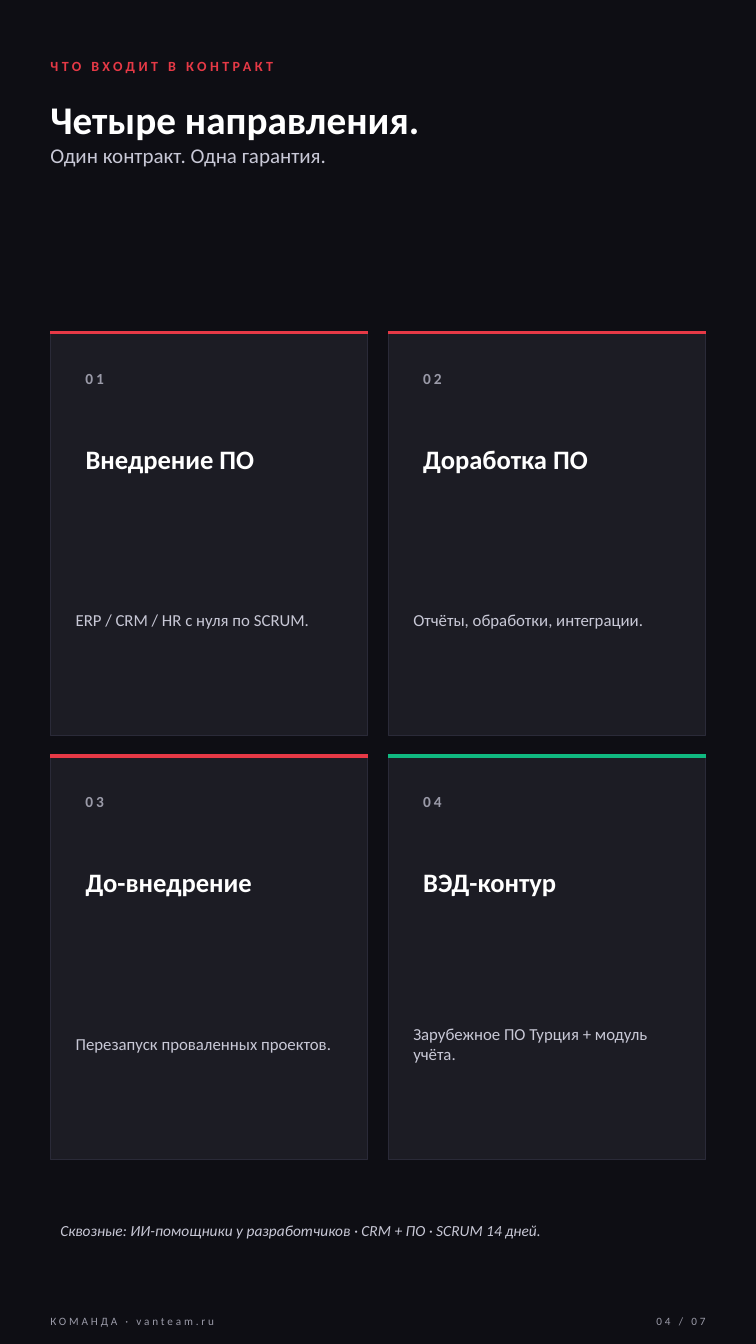
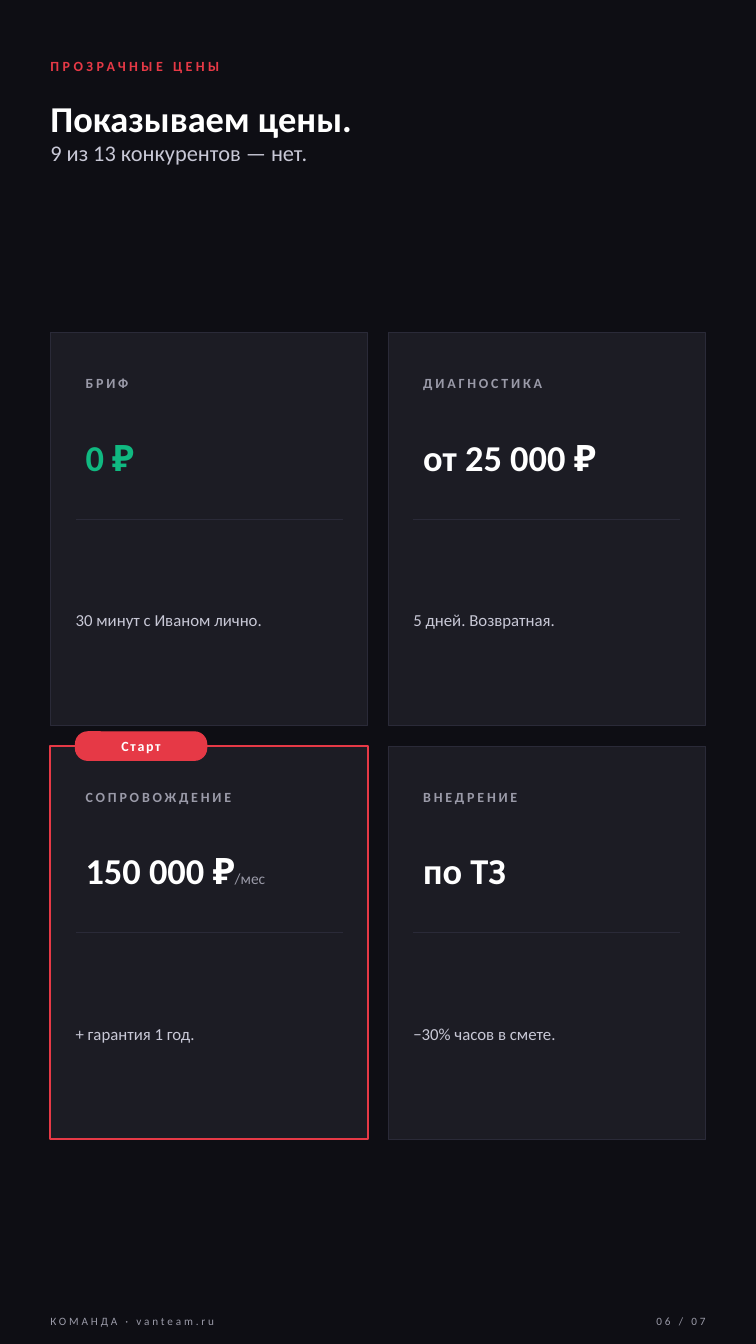
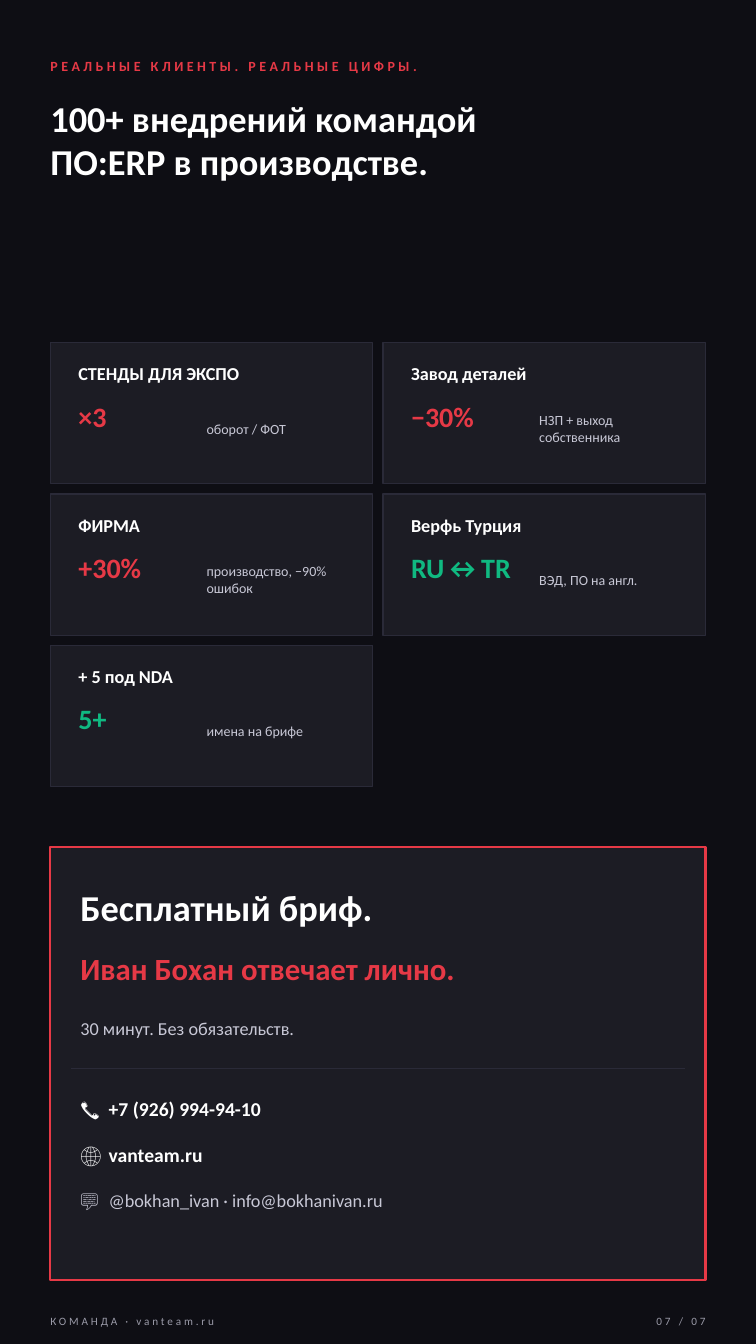
from pptx import Presentation
from pptx.dml.color import RGBColor
from pptx.enum.shapes import MSO_CONNECTOR as Connector, MSO_SHAPE as Shape
from pptx.enum.text import MSO_ANCHOR as Anchor, PP_ALIGN as Align
from pptx.oxml.ns import qn
from pptx.util import Emu, Pt
from lxml import etree

# Shared style: 100 px to the inch
EMU_PER_PX = 9144
SLIDE_WIDTH, SLIDE_HEIGHT = 750, 1333
MARGIN = 50
CONTENT_WIDTH = SLIDE_WIDTH - 2 * MARGIN
FONT = "Calibri"
BLANK_LAYOUT = 6

BACKGROUND = RGBColor(0x0E, 0x0E, 0x14)
CARD = RGBColor(0x1C, 0x1C, 0x24)
BORDER = RGBColor(0x2A, 0x2A, 0x38)
RED = RGBColor(0xE6, 0x39, 0x46)
GREEN = RGBColor(0x10, 0xB9, 0x81)
WHITE = RGBColor(0xFF, 0xFF, 0xFF)
LIGHT = RGBColor(0xC8, 0xC8, 0xD6)
MUTED = RGBColor(0x9A, 0x9A, 0xA8)


def px(length):
    return Emu(length * EMU_PER_PX)


def px_box(box):
    return [px(length) for length in box]


# Basic parts
def add_run(paragraph, text, size, color, bold=False, italic=False, spacing=0):
    for number, line in enumerate(text.split("\n")):
        if number:
            paragraph.add_line_break()
        if not line:
            continue
        run = paragraph.add_run()
        run.text = line
        font = run.font
        font.name, font.size, font.bold, font.italic = FONT, Pt(size), bold, italic
        font.color.rgb = color
        if spacing:
            run._r.get_or_add_rPr().set("spc", str(round(spacing * 100)))


def write(shape, text, align=Align.LEFT, anchor=Anchor.MIDDLE, padded=True,
          space_after=None, tab=None, tail=None, **style):
    """Fill a shape with one paragraph; tail is a second (text, style) run."""
    frame = shape.text_frame
    frame.word_wrap = True
    frame.vertical_anchor = anchor
    if not padded:
        frame.margin_left = frame.margin_right = 0
        frame.margin_top = frame.margin_bottom = 0
    paragraph = frame.paragraphs[0]
    paragraph.alignment = align
    if space_after:
        paragraph.space_after = Pt(space_after)
    if tab:
        tab_list = etree.SubElement(paragraph._p.get_or_add_pPr(), qn("a:tabLst"))
        etree.SubElement(tab_list, qn("a:tab"), pos=str(px(tab)), algn="l")
    add_run(paragraph, text, **style)
    if tail:
        tail_text, tail_style = tail
        add_run(paragraph, tail_text, **tail_style)


def add_text(slide, box, text, **style):
    write(slide.shapes.add_textbox(*px_box(box)), text, **style)


def add_panel(slide, box, fill=CARD, line=BORDER, line_width=0.75, kind=Shape.RECTANGLE):
    panel = slide.shapes.add_shape(kind, *px_box(box))
    panel.shadow.inherit = False
    panel.fill.solid()
    panel.fill.fore_color.rgb = fill
    panel.line.color.rgb = line
    panel.line.width = Pt(line_width)
    return panel


def add_rule(slide, left, top, width, color=BORDER, weight=0.75):
    rule = slide.shapes.add_connector(
        Connector.STRAIGHT, px(left), px(top), px(left + width), px(top))
    rule.line.color.rgb = color
    rule.line.width = Pt(weight)
    etree.SubElement(rule._element.spPr, qn("a:effectLst"))


def grid_boxes(count, top, height, gap_x, gap_y, columns=2):
    width = (CONTENT_WIDTH - gap_x * (columns - 1)) // columns
    for index in range(count):
        row, column = divmod(index, columns)
        yield (MARGIN + column * (width + gap_x), top + row * (height + gap_y),
               width, height)


# Header and footer of every slide
def start_slide(presentation, number, label, title, title_size, tail=None):
    slide = presentation.slides.add_slide(presentation.slide_layouts[BLANK_LAYOUT])
    add_text(slide, (MARGIN, 50, 630, 30), label, padded=False,
             size=10, color=RED, bold=True, spacing=2.5)
    add_text(slide, (MARGIN, 95, CONTENT_WIDTH, 160), title, padded=False,
             anchor=Anchor.TOP, space_after=4, tail=tail,
             size=title_size, color=WHITE, bold=True)
    footer = dict(padded=False, size=8, color=MUTED, spacing=2)
    add_text(slide, (MARGIN, 1298, 450, 25), "КОМАНДА · vanteam.ru", **footer)
    add_text(slide, (590, 1298, 110, 25), f"{number:02} / 07", align=Align.RIGHT, **footer)
    return slide


# Cards
def service_card(slide, box, number, name, description, accent):
    left, top, width, height = box
    inner_left, inner_width = left + 25, width - 50
    add_panel(slide, box)
    add_rule(slide, left, top, width, accent, 2.5)
    add_text(slide, (inner_left, top + 30, 150, 30), f"{number:02}",
             size=11, color=MUTED, bold=True, spacing=2)
    add_text(slide, (inner_left, top + 70, inner_width, 110), name,
             size=19, color=WHITE, bold=True)
    add_text(slide, (inner_left, top + 190, inner_width, height - 210), description,
             padded=False, size=12, color=LIGHT)


def price_card(slide, box, name, price, description, color=WHITE, unit=None, badge=None):
    left, top, width, height = box
    inner_left, inner_width = left + 25, width - 50
    if badge:
        add_panel(slide, box, line=RED, line_width=1.5)
        pill = add_panel(slide, (inner_left, top - 14, 130, 28), fill=RED, line=RED,
                         line_width=1, kind=Shape.ROUNDED_RECTANGLE)
        pill.adjustments[0] = 0.43
        write(pill, badge, align=Align.CENTER, padded=False,
              size=10, color=WHITE, bold=True, spacing=1.2)
    else:
        add_panel(slide, box)
    add_text(slide, (inner_left, top + 35, inner_width, 30), name,
             size=10, color=MUTED, bold=True, spacing=2)
    add_text(slide, (inner_left, top + 78, inner_width, 90), price,
             tail=(unit, dict(size=11, color=MUTED)) if unit else None,
             size=26, color=color, bold=True)
    add_rule(slide, inner_left, top + 185, inner_width)
    add_text(slide, (inner_left, top + 200, inner_width, height - 220), description,
             padded=False, size=12, color=LIGHT)


def client_card(slide, box, name, figure, description, color):
    left, top, _, _ = box
    add_panel(slide, box)
    add_text(slide, (left + 18, top + 13, 280, 35), name, size=13, color=WHITE, bold=True)
    add_text(slide, (left + 18, top + 50, 140, 45), figure, size=20, color=color, bold=True)
    add_text(slide, (left + 155, top + 60, 150, 50), description,
             padded=False, size=10, color=LIGHT)


def contact_panel(slide, box):
    left, top, width, _ = box
    inner_left, inner_width = left + 20, width - 40
    add_panel(slide, box, line=RED, line_width=1.5)
    strong = dict(size=14, color=WHITE, bold=True, tab=28)
    lines = [
        (25, 70, "Бесплатный бриф.", dict(size=26, color=WHITE, bold=True)),
        (90, 60, "Иван Бохан отвечает лично.", dict(size=22, color=RED, bold=True)),
        (160, 40, "30 минут. Без обязательств.", dict(size=13, color=LIGHT)),
        (240, 40, "📞\t+7 (926) 994-94-10", strong),
        (285, 40, "🌐\tvanteam.ru", strong),
        (330, 40, "💬\t@bokhan_ivan · info@bokhanivan.ru",
         dict(size=13, color=LIGHT, tab=28)),
    ]
    for offset, height, text, style in lines:
        add_text(slide, (inner_left, top + offset, inner_width, height), text, **style)
    add_rule(slide, inner_left, top + 220, inner_width)


# Slides
def services_slide(presentation):
    slide = start_slide(presentation, 4, "ЧТО ВХОДИТ В КОНТРАКТ", "Четыре направления.\n", 28,
                        tail=("Один контракт. Одна гарантия.", dict(size=15, color=LIGHT)))
    services = [
        ("Внедрение ПО", "ERP / CRM / HR с нуля по SCRUM.", RED),
        ("Доработка ПО", "Отчёты, обработки, интеграции.", RED),
        ("До-внедрение", "Перезапуск проваленных проектов.", RED),
        ("ВЭД-контур", "Зарубежное ПО Турция + модуль учёта.", GREEN),
    ]
    boxes = grid_boxes(len(services), top=330, height=400, gap_x=20, gap_y=20)
    for number, (box, service) in enumerate(zip(boxes, services), 1):
        service_card(slide, box, number, *service)
    add_text(slide, (MARGIN, 1200, CONTENT_WIDTH, 40),
             "Сквозные: ИИ-помощники у разработчиков · CRM + ПО · SCRUM 14 дней.",
             size=11, color=LIGHT, italic=True)


def prices_slide(presentation):
    slide = start_slide(presentation, 6, "ПРОЗРАЧНЫЕ ЦЕНЫ", "Показываем цены.\n", 26,
                        tail=("9 из 13 конкурентов — нет.", dict(size=16, color=LIGHT)))
    prices = [
        ("БРИФ", "0 ₽", "30 минут с Иваном лично.", dict(color=GREEN)),
        ("ДИАГНОСТИКА", "от 25 000 ₽", "5 дней. Возвратная.", {}),
        ("СОПРОВОЖДЕНИЕ", "150 000 ₽", "+ гарантия 1 год.", dict(unit="/мес", badge="Старт")),
        ("ВНЕДРЕНИЕ", "по ТЗ", "−30% часов в смете.", {}),
    ]
    boxes = grid_boxes(len(prices), top=330, height=390, gap_x=20, gap_y=20)
    for box, (name, price, description, options) in zip(boxes, prices):
        price_card(slide, box, name, price, description, **options)


def clients_slide(presentation):
    slide = start_slide(presentation, 7, "РЕАЛЬНЫЕ КЛИЕНТЫ. РЕАЛЬНЫЕ ЦИФРЫ.",
                        "100+ внедрений командой\nПО:ERP в производстве.", 26)
    clients = [
        ("СТЕНДЫ ДЛЯ ЭКСПО", "×3", "оборот / ФОТ", RED),
        ("Завод деталей", "−30%", "НЗП + выход собственника", RED),
        ("ФИРМА", "+30%", "производство, −90% ошибок", RED),
        ("Верфь Турция", "RU↔TR", "ВЭД, ПО на англ.", GREEN),
        ("+ 5 под NDA", "5+", "имена на брифе", GREEN),
    ]
    boxes = grid_boxes(len(clients), top=340, height=140, gap_x=10, gap_y=10)
    for box, client in zip(boxes, clients):
        client_card(slide, box, *client)
    contact_panel(slide, (MARGIN, 840, CONTENT_WIDTH, 430))


def main():
    presentation = Presentation()
    presentation.slide_width = px(SLIDE_WIDTH)
    presentation.slide_height = px(SLIDE_HEIGHT)
    background = presentation.slide_master.background.fill
    background.solid()
    background.fore_color.rgb = BACKGROUND
    services_slide(presentation)
    prices_slide(presentation)
    clients_slide(presentation)
    presentation.save("out.pptx")


if __name__ == "__main__":
    main()
